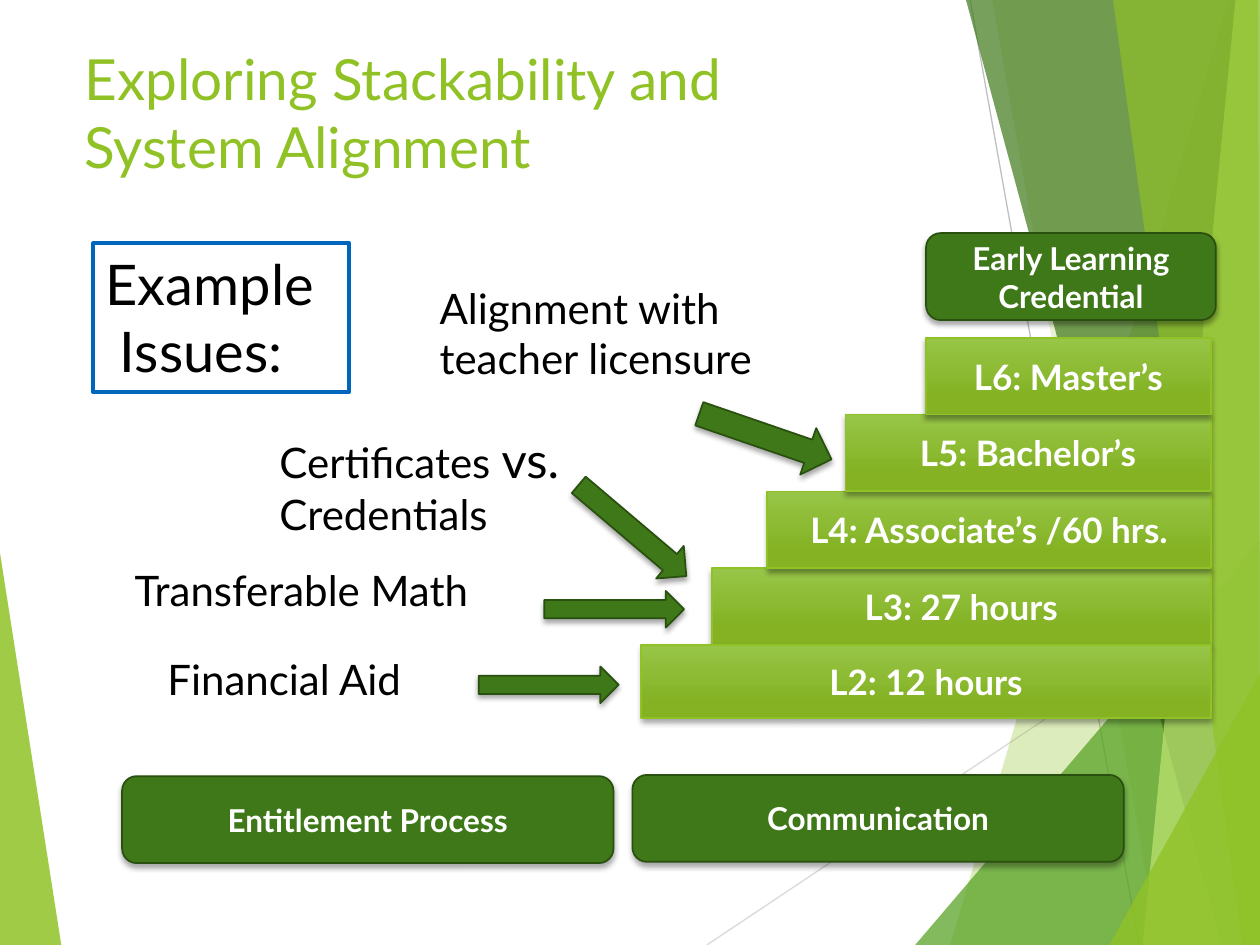
from dataclasses import dataclass
from typing import NamedTuple

from lxml import etree
from pptx import Presentation
from pptx import util as u
from pptx.dml.color import RGBColor
from pptx.enum import shapes as sh, text as tx
from pptx.oxml import ns


@dataclass(frozen=True)
class Theme:
    font: str = "Lato"
    lime: str = "90C226"
    light: str = "97C547"
    deep: str = "84B223"
    pale: str = "C0E474"
    leaf: str = "54A021"
    pine: str = "3F7819"
    edge: str = "2A5010"
    blue: str = "0065BD"
    ink: str = "000000"
    white: str = "FFFFFF"
    title: float = 32.4
    lead: float = 32
    large: float = 28
    note: float = 24
    step: float = 20
    label: float = 18


T = Theme()


class Box(NamedTuple):
    left: float
    top: float
    width: float
    height: float


class Run(NamedTuple):
    text: str
    size: float
    color: str = T.ink
    bold: bool = False


class Facet(NamedTuple):
    color: str
    alpha: int
    points: list


class Ray(NamedTuple):
    start: tuple
    end: tuple
    color: str


class Step(NamedTuple):
    level: int
    left: float
    text: str


class Arrow(NamedTuple):
    box: Box
    turn: float = 0


class Note(NamedTuple):
    box: Box
    runs: list


class Label(NamedTuple):
    box: Box
    text: str


FACETS = [
    Facet(T.lime, 85, [(0, 316), (35.3, 540), (0, 540)]),
    Facet(T.lime, 30, [(702, 0), (543, 540), (720, 540), (720, 0)]),
    Facet(T.lime, 20, [(567.4, 0), (661.7, 540), (720, 540), (720, 0)]),
    Facet(T.leaf, 72, [(522.7, 540), (720, 308.9), (720, 540)]),
    Facet(T.pine, 70, [(552.2, 0), (698.4, 540), (720, 540), (720, 0)]),
    Facet(T.pale, 70, [(706.3, 0), (653, 540), (720, 540), (720, 0)]),
    Facet(T.lime, 65, [(635.8, 0), (709.9, 540), (720, 540), (718.6, 0)]),
    Facet(T.lime, 80, [(634.3, 540), (720, 385.2), (720, 540)]),
]
RAYS = [Ray((403.9, 540), (720, 329), "D9D9D9"),
        Ray((554.4, 0), (650.9, 540), "BFBFBF")]

# Back to front; level 0 is the top of the stair.
STEPS = [
    Step(3, 406.8, "L3: 27 hours"),
    Step(4, 366.5, "L2: 12 hours"),
    Step(2, 438.5, "L4: Associate’s /60 hrs."),
    Step(1, 483.1, "L5: Bachelor’s"),
    Step(0, 529.2, "L6: Master’s"),
]
STAIR_TOP, STAIR_RIGHT, RISE, BASE = 193, 691.9, 43.9, 41.8

NOTES = [
    Note(Box(88.6, 370.1, 160.6, 36), [Run("Financial Aid", T.note)]),
    Note(Box(69.8, 319, 221.8, 36), [Run("Transferable Math", T.note)]),
    Note(Box(152.6, 241.9, 221.8, 70.6), [
        Run("Certificates", T.note), Run(" vs. ", T.large),
        Run("Credentials", T.note)]),
    Note(Box(244.1, 157.7, 221.8, 65.5),
         [Run("Alignment with teacher licensure", T.note)]),
]
ARROWS = [
    Arrow(Box(273.6, 380.9, 79.9, 20.9)),
    Arrow(Box(311, 337.7, 79.9, 20.9)),
    Arrow(Box(321.1, 290.9, 80.6, 24.5), 40.3),
    Arrow(Box(397.4, 235.4, 79.9, 28.1), 19),
]
LABELS = [
    Label(Box(69.8, 443.5, 280.8, 49.7), "Entitlement Process"),
    Label(Box(361.4, 442.8, 280.8, 49.7), "Communication"),
    Label(Box(529.2, 133.2, 165.6, 49.7), "Early Learning Credential"),
]


def rgb(code: str) -> RGBColor:
    return RGBColor.from_string(code)


def place(box: Box) -> list:
    return [u.Pt(n) for n in box]


def add_run(para, run: Run) -> None:
    item = para.add_run()
    item.text = run.text
    font = item.font
    font.name, font.size, font.bold = T.font, u.Pt(run.size), run.bold
    font.color.rgb = rgb(run.color)


def set_line(item, color: str, width: float) -> None:
    item.line.color.rgb = rgb(color)
    item.line.width = u.Pt(width)


def add_shade(item) -> None:
    """Give the shape a soft shadow straight below it."""
    item.shadow.inherit = False
    effects = item.element.spPr.find(ns.qn("a:effectLst"))
    shade = etree.SubElement(
        effects, ns.qn("a:outerShdw"), blurRad=str(u.Pt(3)),
        dist=str(u.Pt(2)), dir="5400000", algn="ctr", rotWithShape="0")
    color = etree.SubElement(shade, ns.qn("a:srgbClr"), val=T.ink)
    etree.SubElement(color, ns.qn("a:alpha"), val="35000")


def add_block(slide, kind, box: Box, edge: str):
    item = slide.shapes.add_shape(kind, *place(box))
    set_line(item, edge, 1)
    add_shade(item)
    return item


def add_solid(slide, kind, box: Box):
    item = add_block(slide, kind, box, T.edge)
    item.fill.solid()
    item.fill.fore_color.rgb = rgb(T.pine)
    return item


def set_caption(item, text: str, size: float) -> None:
    frame = item.text_frame
    frame.word_wrap = True
    frame.vertical_anchor = tx.MSO_ANCHOR.MIDDLE
    para = frame.paragraphs[0]
    para.alignment = tx.PP_ALIGN.CENTER
    add_run(para, Run(text, size, T.white, True))


def draw_facet(slide, facet: Facet) -> None:
    pen = slide.shapes.build_freeform(*facet.points[0], scale=u.Pt(1))
    pen.add_line_segments(facet.points[1:], close=True)
    item = pen.convert_to_shape()
    item.shadow.inherit = False
    item.line.fill.background()
    item.fill.solid()
    item.fill.fore_color.rgb = rgb(facet.color)
    color = item.element.spPr.find(".//" + ns.qn("a:srgbClr"))
    etree.SubElement(color, ns.qn("a:alpha"), val=str(facet.alpha * 1000))


def draw_ray(slide, ray: Ray) -> None:
    ends = [u.Pt(n) for n in ray.start + ray.end]
    item = slide.shapes.add_connector(sh.MSO_CONNECTOR.STRAIGHT, *ends)
    set_line(item, ray.color, 0.75)
    etree.SubElement(item.element.spPr, ns.qn("a:effectLst"))


def draw_title(slide) -> None:
    title = slide.shapes.title
    title.element.getparent().append(title.element)
    title.left, title.top, title.width, title.height = place(
        Box(41, 21.6, 622.8, 91.4))
    frame = title.text_frame
    frame.word_wrap = True
    frame.auto_size = tx.MSO_AUTO_SIZE.NONE
    frame.vertical_anchor = tx.MSO_ANCHOR.TOP
    para = frame.paragraphs[0]
    para.alignment = tx.PP_ALIGN.LEFT
    add_run(para, Run("Exploring Stackability and ", T.title, T.lime))
    para.add_line_break()
    add_run(para, Run("System Alignment", T.title, T.lime))


def draw_step(slide, step: Step) -> None:
    high = BASE if step.level == 4 else RISE
    box = Box(step.left, STAIR_TOP + RISE * step.level,
              STAIR_RIGHT - step.left, high)
    item = add_block(slide, sh.MSO_SHAPE.RECTANGLE, box, T.lime)
    item.fill.gradient()
    item.fill.gradient_angle = 270
    stops = item.fill.gradient_stops
    for stop, color, spot in zip(stops, (T.light, T.deep), (0, 0.78)):
        stop.color.rgb, stop.position = rgb(color), spot
    set_caption(item, step.text, T.step)


def draw_note(slide, box: Box, *lines: list):
    """Add a text box with one paragraph for each list of runs."""
    item = slide.shapes.add_textbox(*place(box))
    frame = item.text_frame
    frame.word_wrap = True
    for spot, runs in enumerate(lines):
        para = frame.add_paragraph() if spot else frame.paragraphs[0]
        for run in runs:
            add_run(para, run)
    return item


def main() -> None:
    deck = Presentation()
    deck.slide_width, deck.slide_height = u.Pt(720), u.Pt(540)
    slide = deck.slides.add_slide(deck.slide_layouts[5])
    draw_facet(slide, FACETS[0])
    for ray in RAYS:
        draw_ray(slide, ray)
    for facet in FACETS[1:]:
        draw_facet(slide, facet)
    draw_title(slide)
    for step in STEPS:
        draw_step(slide, step)
    issues = draw_note(slide, Box(53.3, 139, 146.2, 85),
                       [Run("Example", T.lead)], [Run(" Issues:", T.lead)])
    set_line(issues, T.blue, 2.25)
    for note in NOTES:
        draw_note(slide, note.box, note.runs)
    for arrow in ARROWS:
        add_solid(slide, sh.MSO_SHAPE.RIGHT_ARROW, arrow.box).rotation = arrow.turn
    for label in LABELS:
        item = add_solid(slide, sh.MSO_SHAPE.ROUNDED_RECTANGLE, label.box)
        set_caption(item, label.text, T.label)
    deck.save("out.pptx")


if __name__ == "__main__":
    main()
